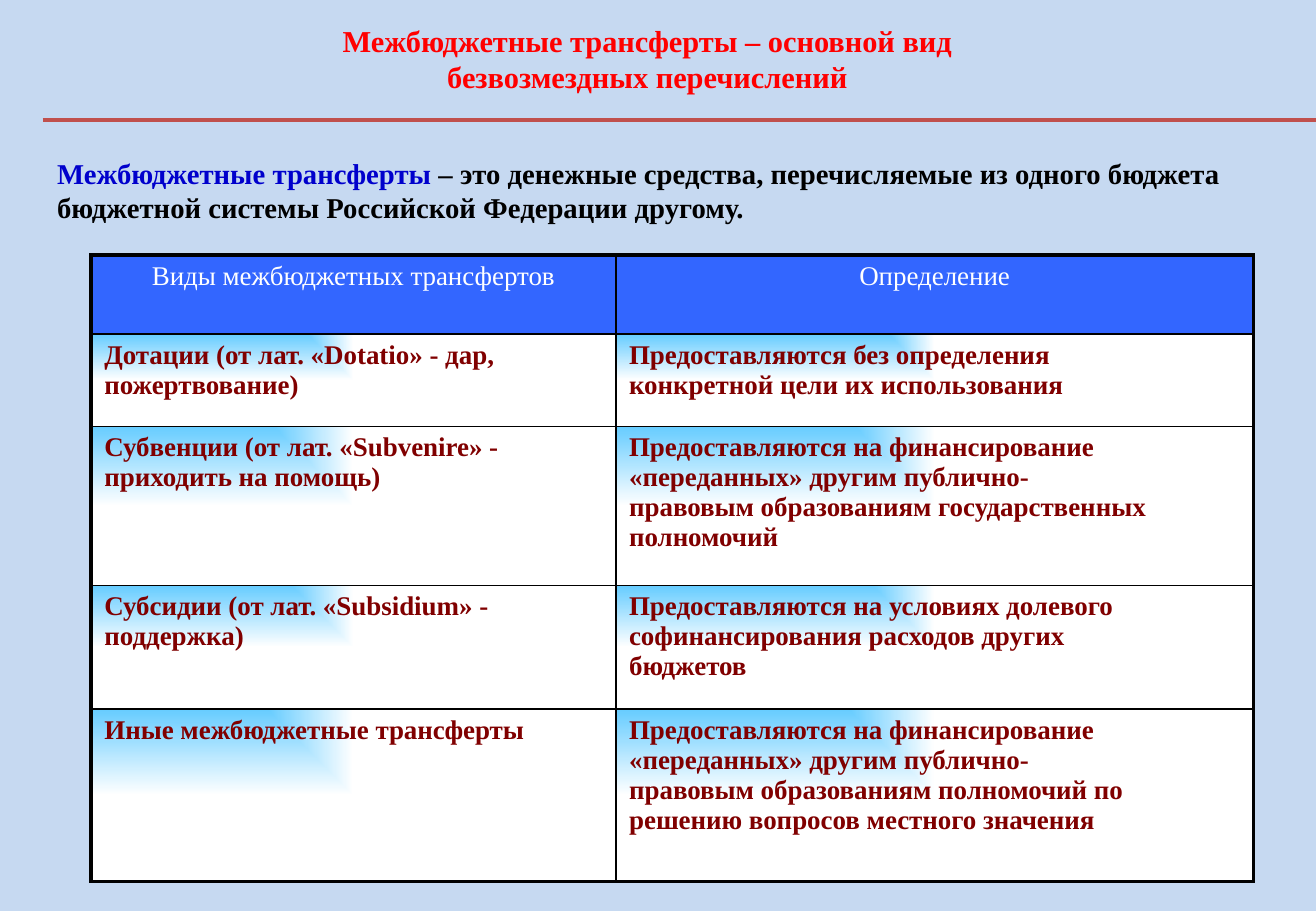
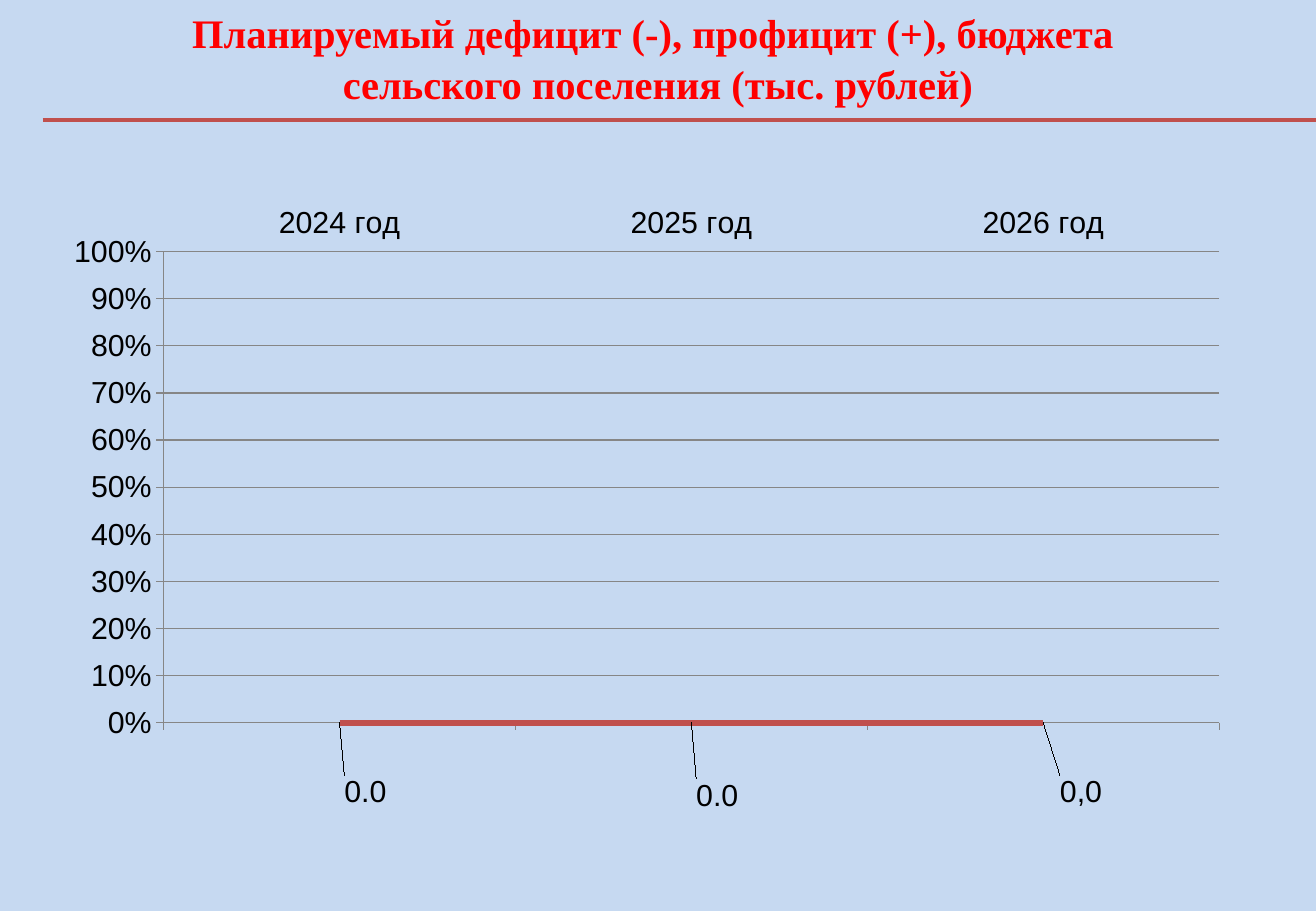
from lxml import etree
from pptx import Presentation
from pptx.chart import data
from pptx.dml import color as clr
from pptx.enum import chart as ch, shapes, text
from pptx.oxml import ns, parse_xml
from pptx.util import Pt

HUES = {"back": "C6D9F1", "rule": "C0504D", "title": "FF0000", "term": "0000CC",
        "ink": "000000", "head": "3366FF", "white": "FFFFFF", "cell": "800000",
        "sky": "66CCFF", "grid": "868686"}
SERIF = "Times New Roman"


def rgb(name):
    return clr.RGBColor.from_string(HUES[name])


def write(par, words, size, hue, bold=True):
    """Add one run in the serif face to a paragraph."""
    run = par.add_run()
    run.text = words
    run.font.name, run.font.size, run.font.bold = SERIF, Pt(size), bold
    run.font.color.rgb = rgb(hue)


deck = Presentation()
deck.slide_width, deck.slide_height = Pt(780), Pt(540)
back = deck.slide_master.background.fill
back.solid()
back.fore_color.rgb = rgb("back")

# Titles and the rule below them: lines, box, size, line spacing
heads = [
    (["Межбюджетные трансферты – основной вид", "безвозмездных перечислений"],
     (21.6, 9.4, 724.3, 50.4), 18, 1),
    (["Планируемый дефицит (-), профицит (+), бюджета ",
      "сельского поселения (тыс. рублей)"],
     (0, 0, 780, 46), 24, 1.05),
]
slides = []
for lines, box, size, gap in heads:
    slide = deck.slides.add_slide(deck.slide_layouts[5])
    slides.append(slide)
    rule = slide.shapes.add_connector(
        shapes.MSO_CONNECTOR.STRAIGHT, Pt(25.2), Pt(71.2), Pt(780), Pt(71.2))
    rule.line.color.rgb, rule.line.width = rgb("rule"), Pt(2.5)
    etree.SubElement(rule._element.spPr, ns.qn("a:effectLst"))

    title = slide.shapes.title
    title.left, title.top, title.width, title.height = map(Pt, box)
    frame = title.text_frame
    frame.auto_size = text.MSO_AUTO_SIZE.NONE
    frame.vertical_anchor = text.MSO_ANCHOR.TOP
    for i, line in enumerate(lines):
        par = frame.add_paragraph() if i else frame.paragraphs[0]
        par.alignment, par.line_spacing = text.PP_ALIGN.CENTER, gap
        write(par, line, size, "title")

# Slide 1: definition and table of transfers
first, second = slides
frame = first.shapes.add_textbox(Pt(27.4), Pt(88.6), Pt(725), Pt(47.5)).text_frame
frame.word_wrap = True
frame.margin_left = frame.margin_right = Pt(6.5)
par = frame.paragraphs[0]
write(par, "Межбюджетные трансферты", 17, "term")
write(par, " – это денежные средства, перечисляемые из одного бюджета "
           "бюджетной системы Российской Федерации другому.", 17, "ink")

rows = [
    (46.8, ["Виды межбюджетных трансфертов"], ["Определение"]),
    (54.7, ["Дотации (от лат. «Dotatio» - дар,", "пожертвование)"],
     ["Предоставляются без определения", "конкретной цели их использования"]),
    (94.3, ["Субвенции (от лат. «Subvenire» -", "приходить на помощь)"],
     ["Предоставляются на финансирование", "«переданных» другим публично-",
      "правовым образованиям государственных полномочий"]),
    (73.4, ["Субсидии (от лат. «Subsidium» -", "поддержка)"],
     ["Предоставляются на условиях долевого", "софинансирования расходов других",
      "бюджетов"]),
    (102.2, ["Иные межбюджетные трансферты"],
     ["Предоставляются на финансирование", "«переданных» другим публично-",
      "правовым образованиям полномочий по решению вопросов местного значения"]),
]
grid = first.shapes.add_table(
    len(rows), 2, Pt(54), Pt(151.2), Pt(689), Pt(371.4)).table
grid.horz_banding = False
for col, width in zip(grid.columns, (311, 378)):
    col.width = Pt(width)
for r, (height, *cells) in enumerate(rows):
    grid.rows[r].height = Pt(height)
    for c, lines in enumerate(cells):
        cell = grid.cell(r, c)
        cell.margin_left = cell.margin_right = Pt(7.9)
        cell.margin_top = cell.margin_bottom = Pt(3.6)
        for i, line in enumerate(lines):
            par = cell.text_frame.add_paragraph() if i else cell.text_frame.paragraphs[0]
            if r == 0:
                par.alignment = text.PP_ALIGN.CENTER
            write(par, line, 16, "cell" if r else "white", r > 0)
        props = cell._tc.get_or_add_tcPr()
        outer = {"L": c == 0, "R": c == 1, "T": r == 0, "B": r == len(rows) - 1}
        for side, edge in outer.items():
            props.append(parse_xml(
                f'<a:ln{side} {ns.nsdecls("a")} w="{Pt(2.25 if edge else 1)}"><a:solidFill>'
                f'<a:srgbClr val="{HUES["ink"]}"/></a:solidFill></a:ln{side}>'))
        if r == 0:
            cell.fill.solid()
            cell.fill.fore_color.rgb = rgb("head")
        else:
            props.append(parse_xml(
                f'<a:gradFill {ns.nsdecls("a")} rotWithShape="0"><a:gsLst>'
                f'<a:gs pos="0"><a:srgbClr val="{HUES["sky"]}"/></a:gs>'
                f'<a:gs pos="100000"><a:srgbClr val="{HUES["white"]}"/></a:gs></a:gsLst>'
                '<a:path path="rect"><a:fillToRect r="100000" b="100000"/></a:path>'
                '</a:gradFill>'))

# Slide 2: chart of the planned balance
facts = data.CategoryChartData(number_format="#,##0.0")
facts.categories = ["2024 год", "2025 год", "2026 год"]
facts.add_series("Series 1", [0, 0, 0])
chart = second.shapes.add_chart(
    ch.XL_CHART_TYPE.LINE_STACKED_100, Pt(43.9), Pt(116.6), Pt(707), Pt(374.4), facts).chart
chart.has_legend = chart.has_title = False
chart.font.name, chart.font.size = "Arial", Pt(18)
chart.font.color.rgb = rgb("ink")

years, share = chart.category_axis, chart.value_axis
years.tick_label_position = ch.XL_TICK_LABEL_POSITION.HIGH
share.has_major_gridlines = True
share.tick_labels.number_format = "0%"
share.tick_labels.number_format_is_linked = False
for axis in (years, share):
    axis.major_tick_mark = ch.XL_TICK_MARK.OUTSIDE
    axis.minor_tick_mark = ch.XL_TICK_MARK.NONE
for part in (years, share, share.major_gridlines):
    part.format.line.color.rgb, part.format.line.width = rgb("grid"), Pt(0.75)

plot = chart.plots[0]
plot.vary_by_categories = False
series = plot.series[0]
series.smooth = False
series.format.line.color.rgb, series.format.line.width = rgb("rule"), Pt(3.5)
labels = series.data_labels
labels.show_value = True
labels.number_format, labels.number_format_is_linked = "#,##0.0", False
for i, (x, y) in enumerate([(0, 0.11), (0, 0.115), (0.01, 0.11)]):
    label = series.points[i].data_label
    label.position = ch.XL_LABEL_POSITION.RIGHT
    if i == 2:
        label.text_frame.paragraphs[0].add_run().text = "0,0"
    label._dLbl.insert(1, parse_xml(
        f'<c:layout {ns.nsdecls("c")}><c:manualLayout><c:x val="{x}"/><c:y val="{y}"/>'
        '</c:manualLayout></c:layout>'))

area = chart._chartSpace.chart.plotArea
for old in area.findall(ns.qn("c:layout")):
    area.remove(old)
area.insert(0, parse_xml(
    f'<c:layout {ns.nsdecls("c")}><c:manualLayout><c:layoutTarget val="inner"/>'
    '<c:xMode val="edge"/><c:yMode val="edge"/><c:x val="0.074"/><c:y val="0.087"/>'
    '<c:w val="0.886"/><c:h val="0.746"/></c:manualLayout></c:layout>'))

deck.save("out.pptx")
